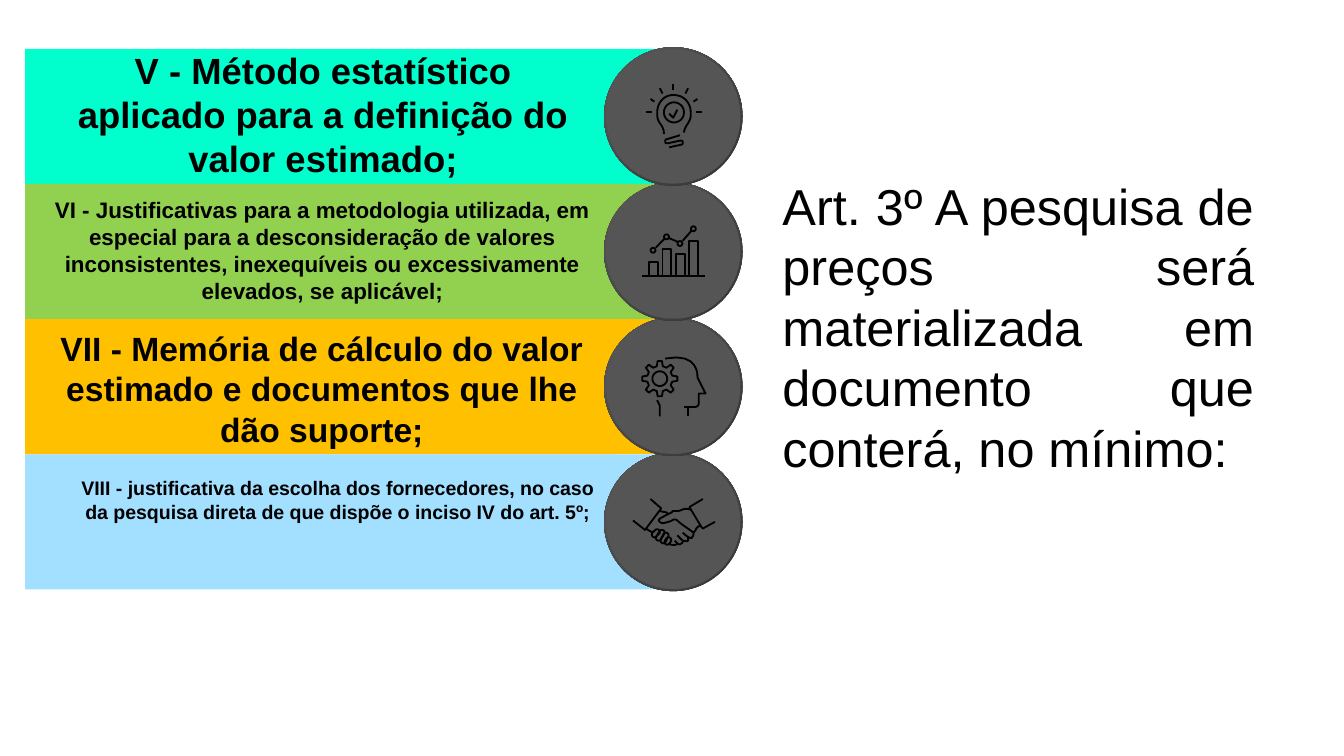
from math import cos, sin, pi, atan2
from pptx import Presentation
from pptx.dml.color import RGBColor
from pptx.enum.shapes import MSO_SHAPE
from pptx.enum.text import MSO_ANCHOR, MSO_AUTO_SIZE, PP_ALIGN
from pptx.util import Pt

TITLE = ("Art. 3º A pesquisa de preços será materializada em documento "
         "que conterá, no mínimo:")

# Icon strokes around the disc centre, in hundredths of an inch.
# L line, Z closed line, C joined Bezier curves, O circle (centre, radius),
# P pill (two centres, radius), G gear (centre, radii)
BULB = [
    ("C", [(-7, 13), (-7, 11), (-7, 9), (-10, 5), (-12, 2), (-12, 0), (-12, -3),
           (-12, -10), (-7, -16), (0, -16), (8, -16), (13, -10), (13, -3),
           (13, 0), (13, 2), (11, 5), (9, 8), (8, 10), (8, 12)]),
    ("O", [(0.5, -3), 7.5]),
    ("L", [(-3, -2), (0, 1), (3, -5)]),
    ("L", [(0, -20), (0, -24)]), ("L", [(-8, -17), (-10, -21)]),
    ("L", [(-17, -13), (-14, -11)]), ("L", [(-20, -3), (-16, -3)]),
    ("L", [(11, -21), (9, -17)]), ("L", [(18, -13), (15, -11)]),
    ("L", [(17, -3), (21, -3)]),
    ("C", [(5, 14), (5, 14), (-5, 17), (-5, 17), (-6, 17), (-6, 18), (-6, 19),
           (-6, 20), (-5, 20), (-4, 20), (-4, 20), (5, 18), (5, 18),
           (6, 18), (7, 18), (7, 19), (7, 20), (7, 21), (6, 21),
           (6, 21), (-3, 23), (-3, 23)]),
]
CHART = [
    ("L", [(-23, 18), (24, 18)]),
    *[("Z", [(x, y), (x, 18), (x + 6.5, 18), (x + 6.5, y)])
      for x, y in [(-18, 8), (-8, -2), (2, 2), (12, -8)]],
    *[("O", [dot, 1.8]) for dot in [(-15, -1), (-5, -11), (5, -6), (15, -17)]],
    ("L", [(-13, -3), (-6, -10)]), ("L", [(-3, -10), (4, -7)]),
    ("L", [(7, -8), (14, -16)]),
]
HEAD = [
    ("C", [(-6, -21), (20, -26), (18, -7), (18, -7)]),
    ("L", [(18, -7), (24, 5), (19, 5), (19, 12)]),
    ("C", [(19, 12), (19, 14), (18, 15), (16, 15)]),
    ("L", [(16, 15), (8, 15)]), ("L", [(11, 15), (11, 22)]),
    ("L", [(-10, 22), (-10, 14), (-12, 10)]),
    ("G", [(-10, -6), 13.2, 9.5]), ("O", [(-10, -6), 5.5]),
]
HANDS = [
    *[("P", [a, b, 2]) for a, b in [((-14, 9.5), (-12, 7.5)), ((-11, 12), (-8.5, 8)),
                                    ((-7.5, 14), (-5.5, 10)), ((-4.5, 15), (-3.5, 13.5))]],
    ("C", [(7, 8), (7, 8), (11, 12), (13, 12), (14, 12), (14, 12), (14, 11),
           (15, 11), (15, 10), (15, 8)]),
    ("C", [(3, 10), (4, 11), (6, 13), (7, 14), (8, 14), (10, 15), (11, 14),
           (11, 13), (11, 12), (11, 11)]),
    ("C", [(1, 14), (1, 14), (3, 16), (3, 16), (4, 17), (5, 17), (6, 16),
           (7, 16), (7, 15), (7, 14)]),
    ("C", [(-3, 16), (-3, 16), (-2, 17), (-2, 17), (-1, 17), (2, 18), (3, 16)]),
    ("L", [(22, -17), (12, -11), (21, 4), (22, 5), (31, 0)]),
    ("C", [(13, -9), (8, -11), (6, -8), (3, -8), (2, -8), (1, -8), (0, -8),
           (0, -8), (-1, -8), (-1, -7), (-4, -6), (-7, -4), (-9, -3),
           (-13, -1), (-9, 1), (-8, 1), (-7, 1), (-3, 0), (-1, -1),
           (0, -2), (2, -2), (3, -1), (6, 2), (14, 7), (15, 8)]),
    ("C", [(20, 3), (19, 3), (18, 4), (17, 5), (17, 6), (16, 7), (15, 8)]),
    ("L", [(-30, -1), (-21, 6), (-9, -10), (-17, -17)]),
    ("C", [(-20, 5), (-18, 7), (-15, 8), (-15, 8)]),
    ("L", [(-4, -6), (-5, -7), (-10, -8)]),
]

# Text, bar colour, font size, text box (left, top, width, height), icon
ROWS = [
    ("V - Método estatístico aplicado para a definição do valor estimado;",
     "00FFCC", 19.5, (31.7, 26, 283, 70.6), BULB),
    ("VI - Justificativas para a metodologia utilizada, em especial para a "
     "desconsideração de valores inconsistentes, inexequíveis ou "
     "excessivamente elevados, se aplicável;",
     "92D050", 12, (28, 105, 289.5, 58.3), CHART),
    ("VII - Memória de cálculo do valor estimado e documentos que lhe dão suporte;",
     "FFC000", 18, (20.2, 175.7, 304.5, 65.5), HEAD),
    ("VIII - justificativa da escolha dos fornecedores, no caso da pesquisa "
     "direta de que dispõe o inciso IV do art. 5º;",
     "A3E0FF", 10.5, (38.2, 255, 285.8, 25.2), HANDS),
]
LEFT, TOP, STEP, MID = 13.5, 26.2, 72.4, 360.7
RING, DISC = 74.2, 72


def tint(code):
    return RGBColor.from_string(code)


def arc(x, y, r, a, b, n=24):
    turns = [a + (b - a) * i / n for i in range(n + 1)]
    return [(x + r * cos(t), y + r * sin(t)) for t in turns]


def curve(pts, n=8):
    out = [pts[0]]
    for k in range(0, len(pts) - 1, 3):
        for t in [i / n for i in range(1, n + 1)]:
            mix = ((1 - t) ** 3, 3 * t * (1 - t) ** 2, 3 * t * t * (1 - t), t ** 3)
            out.append(tuple(sum(m * p[d] for m, p in zip(mix, pts[k:k + 4]))
                             for d in (0, 1)))
    return out


def trace(kind, data):
    """Return the points of a stroke and whether it is closed."""
    if kind == "C":
        return curve(data), False
    if kind == "O":
        return arc(*data[0], data[1], 0, 2 * pi), True
    if kind == "P":
        (ax, ay), (bx, by), r = data
        t = atan2(by - ay, bx - ax)
        return (arc(ax, ay, r, t + pi / 2, t + 3 * pi / 2, 8)
                + arc(bx, by, r, t - pi / 2, t + pi / 2, 8)), True
    if kind == "G":
        (x, y), far, near = data
        return [(x + r * cos(k * pi / 4 + a), y + r * sin(k * pi / 4 + a))
                for k in range(8)
                for a, r in [(-0.24, near), (-0.12, far), (0.12, far), (0.24, near)]], True
    return data, kind == "Z"


def outline(strokes):
    """Build one freeform from (points, closed) pairs given in points."""
    pen = None
    for pts, shut in strokes:
        pts = [(Pt(x), Pt(y)) for x, y in pts]
        if pen is None:
            pen = slide.shapes.build_freeform(*pts[0])
        else:
            pen.move_to(*pts[0])
        pen.add_line_segments(pts[1:], close=shut)
    shape = pen.convert_to_shape()
    shape.shadow.inherit = False
    return shape


def paint(shape, code):
    shape.fill.solid()
    shape.fill.fore_color.rgb = tint(code)
    shape.line.fill.background()


def disc(y, size):
    shape = slide.shapes.add_shape(MSO_SHAPE.OVAL, Pt(MID - size / 2),
                                   Pt(y - size / 2), Pt(size), Pt(size))
    shape.shadow.inherit = False
    shape.line.fill.background()
    return shape


def write(shape, text, size, align, bold):
    frame = shape.text_frame
    frame.text = text
    frame.word_wrap = True
    frame.auto_size = MSO_AUTO_SIZE.SHAPE_TO_FIT_TEXT
    frame.vertical_anchor = MSO_ANCHOR.TOP
    para = frame.paragraphs[0]
    para.alignment = align
    font = para.runs[0].font
    font.name, font.size, font.bold = "Arial", Pt(size), bold
    font.color.rgb = tint("000000")
    return frame


deck = Presentation()
deck.slide_width, deck.slide_height = Pt(720), Pt(405)
slide = deck.slides.add_slide(deck.slide_layouts[5])

# Title
head = slide.shapes.title
head.left, head.top, head.width, head.height = Pt(412), Pt(90), Pt(267), Pt(170.6)
write(head, TITLE, 27, PP_ALIGN.JUSTIFY, False)

# Bars with a round right end
for i, (_, code, *_) in enumerate(ROWS):
    y = TOP + i * STEP
    end = arc(MID, y + STEP / 2, STEP / 2, -pi / 2, pi / 2)
    paint(outline([([(LEFT, y), *end, (LEFT, y + STEP)], True)]), code)

# Bar texts
for text, _, size, box, _ in ROWS:
    label = slide.shapes.add_textbox(*map(Pt, box))
    frame = write(label, text, size, PP_ALIGN.CENTER, True)
    frame.margin_left = frame.margin_right = frame.margin_top = frame.margin_bottom = 0

# Discs, bottom one first, then icons
for i in reversed(range(len(ROWS))):
    y = TOP + (i + 0.5) * STEP
    ring = disc(y, RING)
    ring.fill.gradient()
    ring.fill.gradient_angle = 135
    for stop, code in zip(ring.fill.gradient_stops, ("353535", "595959")):
        stop.color.rgb = tint(code)
    paint(disc(y, DISC), "555555")
for i, (*_, icon) in enumerate(ROWS):
    y = TOP + (i + 0.5) * STEP
    strokes = [trace(*part) for part in icon]
    sign = outline([([(MID + 0.72 * u, y + 0.72 * v) for u, v in pts], shut)
                    for pts, shut in strokes])
    sign.fill.background()
    sign.line.color.rgb = tint("000000")
    sign.line.width = Pt(1)

deck.save("out.pptx")
